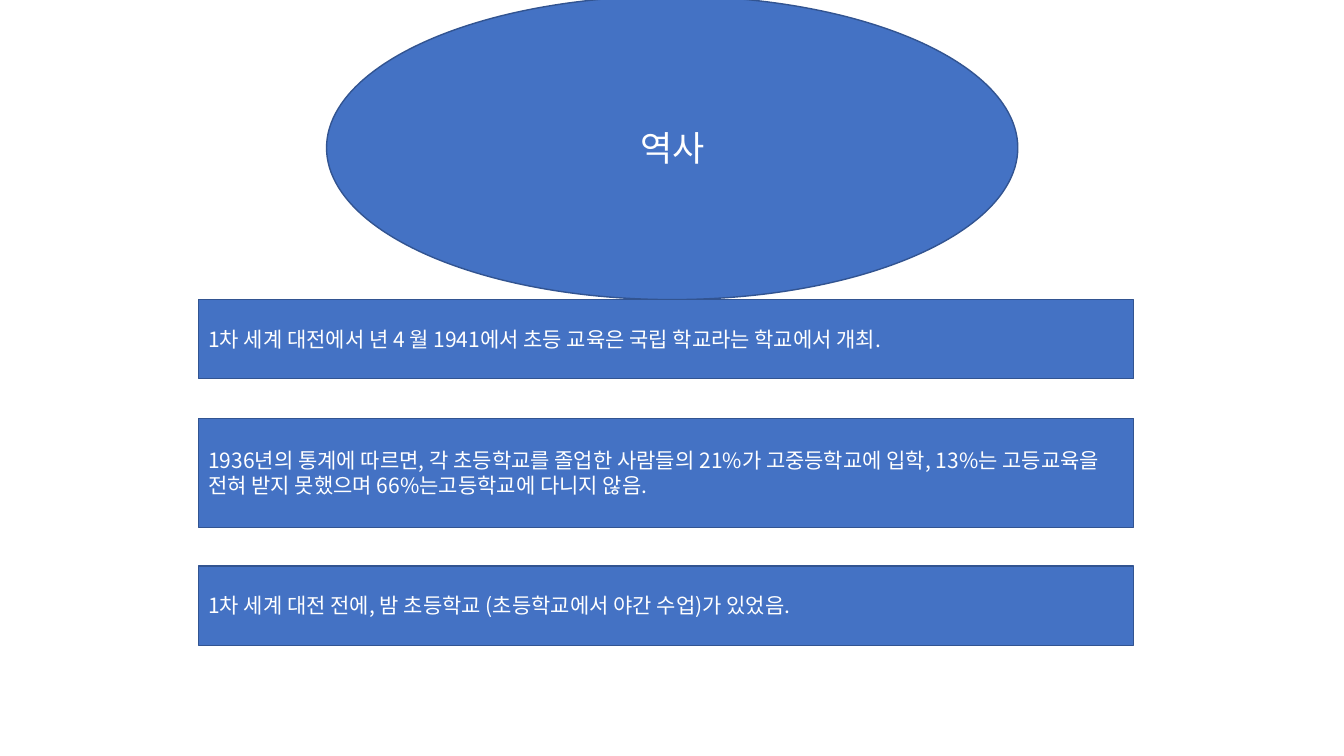
from dataclasses import dataclass

from lxml.etree import SubElement
from pptx import Presentation
from pptx.dml.color import RGBColor
from pptx.enum.shapes import MSO_SHAPE as Preset
from pptx.enum.text import MSO_ANCHOR as Anchor, PP_ALIGN as Align
from pptx.oxml.ns import qn
from pptx.util import Cm, Pt


@dataclass(frozen=True)
class Theme:
    fill: RGBColor = RGBColor(0x44, 0x72, 0xC4)
    outline: RGBColor = RGBColor(0x32, 0x54, 0x91)
    text: RGBColor = RGBColor(0xFF, 0xFF, 0xFF)
    font: str = "Noto Sans CJK KR"
    title_size: int = 25
    body_size: int = 15


theme = Theme()


def write_text(box, text, *, size, align):
    frame = box.text_frame
    frame.word_wrap = True
    frame.vertical_anchor = Anchor.MIDDLE
    para = frame.paragraphs[0]
    para.alignment = align
    span = para.add_run()
    span.text = text
    span.font.size = Pt(size)
    span.font.name = theme.font
    span.font.color.rgb = theme.text
    SubElement(span.font._element, qn("a:ea"), typeface=theme.font)


def add_panel(page, preset, left, top, width, height):
    box = page.shapes.add_shape(preset, Cm(left), Cm(top), Cm(width), Cm(height))
    box.shadow.inherit = False
    box.fill.solid()
    box.fill.fore_color.rgb = theme.fill
    box.line.color.rgb = theme.outline
    box.line.width = Pt(1)
    return box


deck = Presentation()
deck.slide_width = Cm(33.87)
deck.slide_height = Cm(19.05)
page = deck.slides.add_slide(deck.slide_layouts[6])

heading = add_panel(page, Preset.OVAL, 8.23, -0.1, 17.42, 7.65)
write_text(heading, "역사", size=theme.title_size, align=Align.CENTER)

facts = [
    (7.55, 1.99, "1차 세계 대전에서 년 4 월 1941에서 초등 교육은 국립 학교라는 학교에서 개최."),
    (10.54, 2.75, "1936년의 통계에 따르면, 각 초등학교를 졸업한 사람들의 21%가 고중등학교에 입학, "
     "13%는 고등교육을 전혀 받지 못했으며 66%는고등학교에 다니지 않음."),
    (14.26, 2, "1차 세계 대전 전에, 밤 초등학교 (초등학교에서 야간 수업)가 있었음."),
]
for top, height, text in facts:
    fact = add_panel(page, Preset.RECTANGLE, 5, top, 23.57, height)
    write_text(fact, text, size=theme.body_size, align=Align.LEFT)

deck.save("out.pptx")
